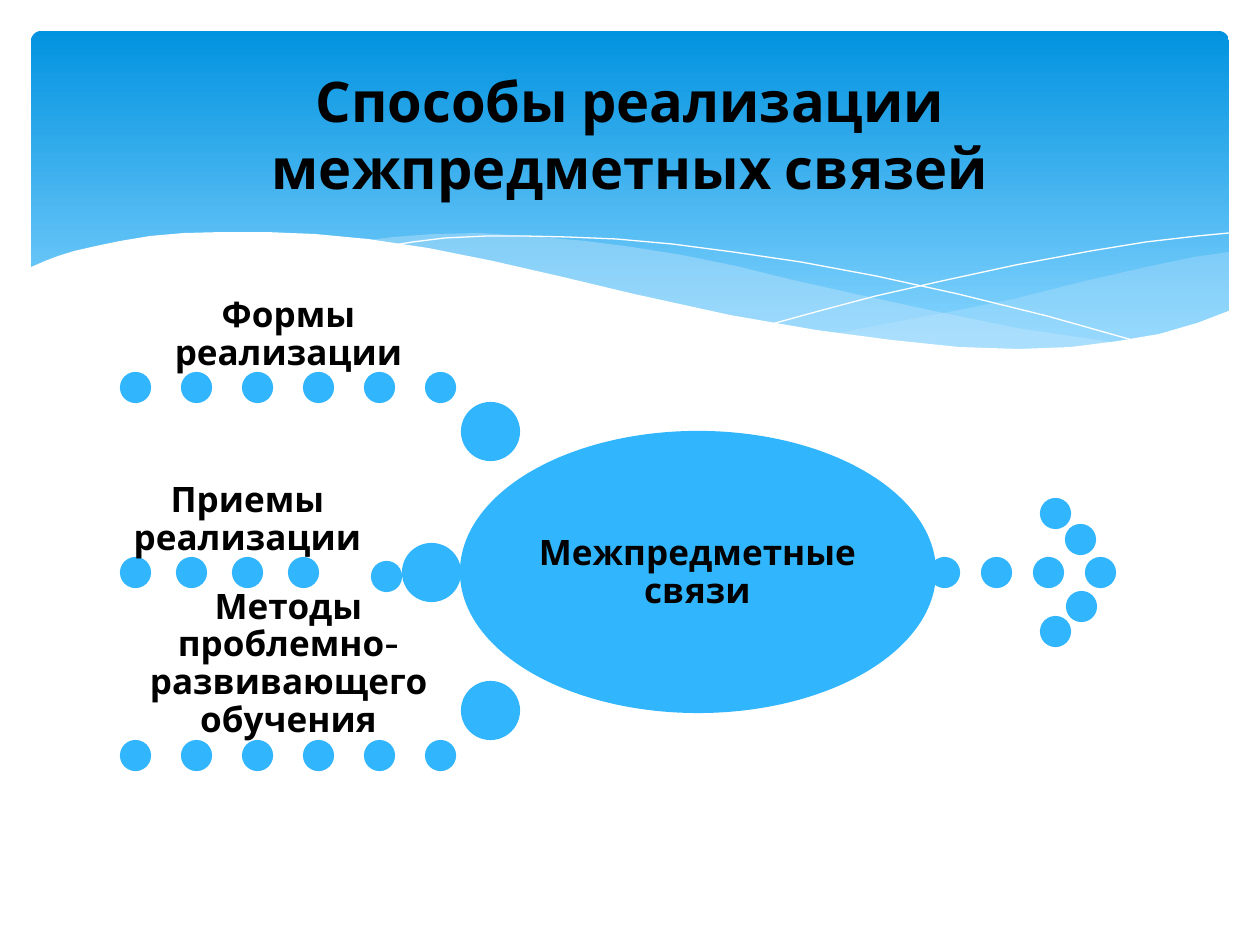
from dataclasses import dataclass
from typing import Optional

from lxml import etree
from pptx import Presentation
from pptx import util as u
from pptx.dml.color import RGBColor
from pptx.enum import shapes, text
from pptx.oxml.ns import qn

EMU_PER_PX = 914400 / 126
DOT, JOINT = 29, 57
FONT = "Cabin"
COLORS = {
    "banner_top": "0293E0",
    "banner_bottom": "83D3FE",
    "wave": "C6E7FC",
    "accent": "31B6FD",
    "white": "FFFFFF",
    "black": "000000",
}


@dataclass(frozen=True)
class Curve:
    points: list[tuple[int, int]]
    fill: Optional[str] = None
    alpha: int = 100
    closed: bool = True


@dataclass(frozen=True)
class Branch:
    label: str
    label_box: tuple[int, int, int, int]
    dots: list[tuple[int, int]]
    joint: tuple[int, int]


def px(length: int) -> int:
    return u.Emu(round(length * EMU_PER_PX))


def rgb(name: str) -> RGBColor:
    return RGBColor.from_string(COLORS[name])


def dot_row(left: int, top: int, step: int, count: int) -> list[tuple[int, int]]:
    return [(left + i * step, top) for i in range(count)]


def draw_banner(slide) -> None:
    banner = slide.shapes.add_shape(
        shapes.MSO_SHAPE.ROUNDED_RECTANGLE, px(31), px(31), px(1198), px(340))
    banner.shadow.inherit = False
    banner.adjustments[0] = 0.03
    banner.line.fill.background()
    banner.fill.gradient()
    banner.fill.gradient_angle = 270
    stops = (("banner_top", 0), ("banner_bottom", 0.9))
    for stop, (color, position) in zip(banner.fill.gradient_stops, stops):
        stop.color.rgb = rgb(color)
        stop.position = position


def draw_curve(slide, curve: Curve) -> None:
    builder = slide.shapes.build_freeform(*curve.points[0], scale=EMU_PER_PX)
    builder.add_line_segments(curve.points[1:], close=curve.closed)
    wave = builder.convert_to_shape()
    wave.shadow.inherit = False
    if curve.fill is None:
        wave.fill.background()
        wave.line.color.rgb = rgb("white")
        wave.line.width = u.Pt(0)
        return
    wave.line.fill.background()
    wave.fill.solid()
    wave.fill.fore_color.rgb = rgb(curve.fill)
    if curve.alpha < 100:
        color = wave.fill._xPr.find(f".//{qn('a:srgbClr')}")
        etree.SubElement(color, qn("a:alpha")).set("val", str(curve.alpha * 1000))


def draw_ellipse(slide, left: int, top: int, width: int, height: int) -> None:
    ellipse = slide.shapes.add_shape(
        shapes.MSO_SHAPE.OVAL, px(left), px(top), px(width), px(height))
    ellipse.shadow.inherit = False
    ellipse.fill.solid()
    ellipse.fill.fore_color.rgb = rgb("accent")
    ellipse.line.color.rgb = rgb("accent")
    ellipse.line.width = u.Pt(1.25)


def draw_text(slide, wording: str, box: tuple[int, int, int, int], *,
              size: int = 20, anchor=text.MSO_ANCHOR.BOTTOM,
              inset: int = 0, spacing: float = 0.9) -> None:
    frame = slide.shapes.add_textbox(*map(px, box)).text_frame
    frame.word_wrap = True
    frame.vertical_anchor = anchor
    frame.margin_left = frame.margin_right = px(inset)
    frame.margin_top = frame.margin_bottom = px(inset)
    paragraph = frame.paragraphs[0]
    paragraph.alignment = text.PP_ALIGN.CENTER
    paragraph.line_spacing = spacing
    run = paragraph.add_run()
    run.text = wording
    run.font.name = FONT
    run.font.size = u.Pt(size)
    run.font.bold = True
    run.font.color.rgb = rgb("black")


def draw_branch(slide, branch: Branch) -> None:
    draw_ellipse(slide, *branch.joint, JOINT, JOINT)
    for dot in branch.dots:
        draw_ellipse(slide, *dot, DOT, DOT)
    draw_text(slide, branch.label, branch.label_box)


CURVES = [
    # Translucent waves
    Curve([(1229, 252), (1194, 257), (1142, 268), (1085, 281), (1014, 299),
           (949, 312), (833, 334), (871, 340), (922, 345), (969, 348),
           (1012, 350), (1064, 348), (1110, 344), (1150, 336), (1187, 326),
           (1229, 311)], "wave", 29),
    Curve([(1125, 344), (1091, 339), (1017, 328), (934, 311), (842, 291),
           (793, 280), (736, 266), (682, 255), (632, 247), (586, 241),
           (529, 236), (479, 233), (433, 234), (394, 237), (360, 241),
           (407, 247), (456, 256), (509, 266), (566, 280), (668, 302),
           (757, 321), (838, 335), (910, 344), (974, 349), (1031, 350),
           (1080, 349)], "wave", 40),
    # Hairlines
    Curve([(389, 246), (413, 242), (445, 238), (487, 236), (524, 236),
           (567, 237), (616, 239), (672, 244), (733, 252), (801, 262),
           (876, 276), (958, 294), (1047, 316), (1143, 343)], closed=False),
    Curve([(772, 324), (823, 310), (876, 296), (942, 281), (1016, 265),
           (1091, 251), (1146, 242), (1198, 236), (1229, 233)], closed=False),
    # White lower edge of the banner
    Curve([(1231, 310), (1197, 323), (1159, 334), (1118, 341), (1071, 347),
           (1019, 349), (959, 347), (892, 340), (816, 330), (730, 315),
           (634, 294), (563, 277), (493, 261), (428, 248), (368, 239),
           (315, 234), (266, 232), (223, 232), (184, 233), (150, 236),
           (120, 241), (96, 246), (74, 251), (58, 256), (45, 261), (29, 268),
           (29, 415), (1231, 415)], "white"),
]

BRANCHES = [
    Branch("Формы реализации", (135, 300, 307, 73),
           dot_row(121, 373, 61, 6), (462, 403)),
    Branch("Приемы реализации", (121, 485, 253, 73),
           dot_row(121, 558, 56, 4) + [(372, 562)], (403, 544)),
    Branch("Методы проблемно-развивающего обучения", (121, 667, 335, 73),
           dot_row(121, 741, 61, 6), (462, 682)),
]

ARROW_DOTS = dot_row(930, 558, 52, 4) + [
    (1041, 499), (1066, 525), (1067, 592), (1041, 617)]


def main() -> None:
    deck = Presentation()
    deck.slide_width, deck.slide_height = px(1260), px(945)
    slide = deck.slides.add_slide(deck.slide_layouts[6])

    # Banner with waves
    draw_banner(slide)
    for curve in CURVES:
        draw_curve(slide, curve)

    # Dotted arrow and central idea
    for dot in ARROW_DOTS:
        draw_ellipse(slide, *dot, DOT, DOT)
    draw_ellipse(slide, 461, 432, 474, 280)
    draw_text(slide, "Межпредметные связи", (530, 474, 335, 198),
              anchor=text.MSO_ANCHOR.MIDDLE, inset=4)

    # Incoming branches
    for branch in BRANCHES:
        draw_branch(slide, branch)

    # Title
    draw_text(slide, "Способы реализации межпредметных связей",
              (63, 47, 1134, 173), size=32, anchor=text.MSO_ANCHOR.MIDDLE,
              inset=10, spacing=1.0)

    deck.save("out.pptx")


if __name__ == "__main__":
    main()
